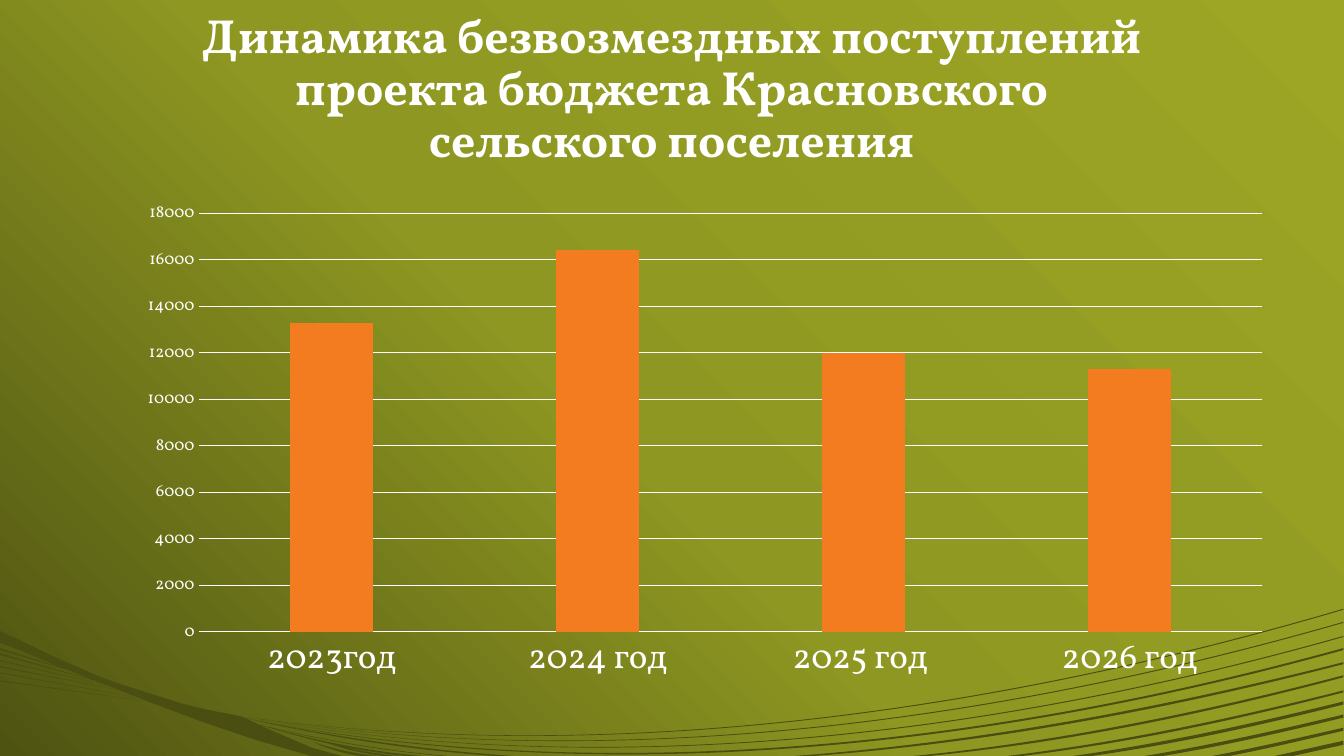
from copy import deepcopy
from dataclasses import dataclass

from lxml import etree
from pptx import Presentation
from pptx.chart.data import CategoryChartData
from pptx.dml.color import RGBColor as RGB
from pptx.enum.chart import XL_CHART_TYPE as ChartType, XL_TICK_MARK as Tick
from pptx.enum.text import MSO_ANCHOR as Anchor, PP_ALIGN as Align
from pptx.oxml import parse_xml
from pptx.oxml.ns import nsdecls, qn
from pptx.util import Cm, Pt


@dataclass(frozen=True)
class Theme:
    """Colours, font and type sizes of the slide."""
    font: str = "Vollkorn"
    white: RGB = RGB(0xFF, 0xFF, 0xFF)
    bar: RGB = RGB(0xF3, 0x7B, 0x20)
    wave: RGB = RGB(0x4A, 0x4E, 0x11)
    gradient: tuple = ((0, "9DA625"), (55, "8E9721"), (100, "4E5312"))
    title: float = 34.2
    category: float = 25
    value: float = 12
    base: float = 10


@dataclass(frozen=True)
class Box:
    """A region of the slide in centimetres."""
    x: float
    y: float
    w: float
    h: float

    def lengths(self):
        """Return left, top, width and height as lengths."""
        return Cm(self.x), Cm(self.y), Cm(self.w), Cm(self.h)


THEME = Theme()
SLIDE = Box(0, 0, 33.87, 19.05)
WAVE = Box(0, 15.34, 33.86, 3.71)
TITLE = Box(4.22, 1.12, 25.4, 3.23)
CHART = Box(1.54, 5.08, 30.4, 12.85)
INCH = 2.54
RIGHT, CREST, FLOOR = 13.33, 6.04, 7.5

LONG_STRANDS = (
    ((2.4, 7.11), (6, 7.6), (9.8, 7.08), 6.04, 0.01),
    ((2.76, 7.16), (6.31, 7.65), (9.99, 7.13), 6.17, 0.01),
    ((2.58, 7.14), (6.18, 7.75), (9.93, 7.27), 6.31, 0.01),
    ((2.45, 7.13), (6.08, 7.83), (9.89, 7.38), 6.43, 0.02),
)
CORNER_STRANDS = (
    (6.57, 6.59, 7.89, 8.08), (6.7, 6.72, 9.07, 9.23),
    (6.85, 6.87, 10, 10.15), (6.96, 6.99, 10.65, 10.84),
    (7.09, 7.12, 11.36, 11.54), (7.22, 7.25, 12.03, 12.2),
    (7.35, 7.39, 12.65, 12.83),
)
FAN_STRANDS = (
    (2.36, 7.11, 4.9, 5.09), (2.19, 7.09, 4.38, 4.44),
    (2.61, 7.2, 4.02, 4.18), (3.21, 7.36, 3.8, 3.96),
    (3.1, 7.36, 3.57, 3.74),
)
LEFT_STRANDS = (
    (6.43, 6.45, 0.88, 6.71), (6.48, 6.5, 1, 6.77),
    (6.55, 6.56, 1.06, 6.8), (6.61, 6.62, 1.2, 6.85),
    (6.67, 6.68, 1.35, 6.92), (6.75, 6.76, 1.47, 6.96),
)
RIBBON = (
    (0, 6.26), (0.57, 6.53), (0.98, 6.71), (1.17, 6.78), (1.8, 6.98),
    (2.05, 7.04), (2.4, 7.11), (2.7, 7.25), (3.1, 7.42), (3.39, 7.5),
    (3.08, 7.5), (2.53, 7.34), (2, 7.16), (1.47, 6.96), (1.06, 6.8),
    (0.55, 6.6), (0.12, 6.42), (0, 6.38),
)


def bend(start, x, near, far):
    """Return a curve to the floor, its controls given as shares of the drop."""
    (x0, y0), drop = start, FLOOR - start[1]
    return [start, (x0 + (x - x0) / 3, y0 + drop * near),
            (x0 + (x - x0) * 2 / 3, y0 + drop * far), (x, FLOOR)]


def curved_strands():
    """Return each curved strand as two cubic edges, out and back."""
    strands = []
    for root, c1, c2, y, thick in LONG_STRANDS:
        edge = [c1, c2, (RIGHT, y)]
        lower = [(px, py + thick) for px, py in edge]
        strands.append([root, *edge, *lower[::-1], root])
    for y0, y1, x0, x1 in CORNER_STRANDS:
        near = 0.29 + 0.22 * (FLOOR - y0)
        strands.append(bend((RIGHT, y0), x0, near, near + 0.36)
                       + bend((RIGHT, y1), x1, near, near + 0.36)[::-1])
    for x, y, x0, x1 in FAN_STRANDS:
        strands.append(bend((x, y), x0, 0.5, 0.85)
                       + bend((x, y), x1, 0.5, 0.85)[::-1])
    return strands


def round_off(lines):
    """Turn three straight segments into one cubic curve."""
    cubic = etree.Element(qn("a:cubicBezTo"))
    lines[0].addprevious(cubic)
    for line in lines:
        cubic.append(line[0])
        line.getparent().remove(line)


def add_background(s):
    """Fill the slide background with the diagonal gradient."""
    fill = s.background.fill
    fill.gradient()
    fill.gradient_angle = 225
    stops = s.element.xpath(".//a:gsLst")[0]
    pattern = deepcopy(stops[0])
    for stop in list(stops):
        stops.remove(stop)
    for percent, colour in THEME.gradient:
        stop = deepcopy(pattern)
        stop.set("pos", str(percent * 1000))
        stop.remove(stop[0])
        etree.SubElement(stop, qn("a:srgbClr")).set("val", colour)
        stops.append(stop)


def add_wave(s, box):
    """Draw the wave of thin strands in the box."""
    strands = curved_strands()
    straight = [[(0, y0), (x, y), (0, y1)] for y0, y1, x, y in LEFT_STRANDS]
    outlines = [[(Cm(x * INCH), Cm((y - CREST) * INCH)) for x, y in outline]
                for outline in (*strands, RIBBON, *straight)]
    builder = s.shapes.build_freeform(*outlines[0][0])
    builder.add_line_segments(outlines[0][1:], close=True)
    for outline in outlines[1:]:
        builder.move_to(*outline[0])
        builder.add_line_segments(outline[1:], close=True)
    sp = builder.convert_to_shape(Cm(box.x), Cm(box.y))
    outline = sp.element.xpath(".//a:path")[0]
    for start in outline.findall(qn("a:moveTo"))[:len(strands)]:
        lines = list(start.itersiblings())[:7]
        round_off(lines[:3])
        round_off(lines[4:])
    sp.left, sp.top, sp.width, sp.height = box.lengths()
    outline.set("w", str(sp.width))
    outline.set("h", str(sp.height))
    sp.shadow.inherit = False
    sp.fill.solid()
    sp.fill.fore_color.rgb = THEME.wave
    sp.line.fill.background()


def style_font(font, size, bold=False):
    """Set the theme face and white colour on a font."""
    font.name, font.size, font.bold = THEME.font, Pt(size), bold
    font.color.rgb = THEME.white


def add_title(s, box):
    """Place the centred heading at the bottom of the box."""
    tf = s.shapes.add_textbox(*box.lengths()).text_frame
    tf.word_wrap = True
    tf.vertical_anchor = Anchor.BOTTOM
    p = tf.paragraphs[0]
    p.text = ("Динамика безвозмездных поступлений проекта бюджета "
              "Красновского сельского поселения")
    p.alignment = Align.CENTER
    p.line_spacing = 0.9
    style_font(p.font, THEME.title, True)


def white_line(line):
    """Make a thin white line."""
    line.color.rgb = THEME.white
    line.width = Pt(0.75)


def add_receipts_chart(s, box):
    """Place the column chart of yearly receipts in the box."""
    data = CategoryChartData()
    data.categories = ["2023год", "2024 год", "2025 год ", "2026 год"]
    data.add_series("Series 1", (13300, 16400, 12000, 11300))
    chart = s.shapes.add_chart(ChartType.COLUMN_CLUSTERED, *box.lengths(),
                               data).chart
    chart.has_legend = chart.has_title = False
    style_font(chart.font, THEME.base)
    plot = chart.plots[0]
    plot.gap_width, plot.overlap = 219, -27
    plot.vary_by_categories = False
    fill = plot.series[0].format.fill
    fill.solid()
    fill.fore_color.rgb = THEME.bar
    years, amounts = chart.category_axis, chart.value_axis
    for axis, size in ((years, THEME.category), (amounts, THEME.value)):
        axis.major_tick_mark = axis.minor_tick_mark = Tick.NONE
        style_font(axis.tick_labels.font, size)
    white_line(years.format.line)
    amounts.format.line.fill.background()
    white_line(amounts.major_gridlines.format.line)
    area = chart.element.xpath(".//c:plotArea")[0]
    for old in area.findall(qn("c:layout")):
        area.remove(old)
    place = "".join(f'<c:{tag} val="{val}"/>' for tag, val in (
        ("layoutTarget", "inner"), ("xMode", "edge"), ("yMode", "edge"),
        ("x", 0.114), ("y", 0.023), ("w", 0.882), ("h", 0.821)))
    area.insert(0, parse_xml(f'<c:layout {nsdecls("c")}><c:manualLayout>'
                             f'{place}</c:manualLayout></c:layout>'))


def main():
    """Build and save the slide."""
    prs = Presentation()
    prs.slide_width, prs.slide_height = Cm(SLIDE.w), Cm(SLIDE.h)
    s = prs.slides.add_slide(prs.slide_layouts[6])
    add_background(s)
    add_wave(s, WAVE)
    add_title(s, TITLE)
    add_receipts_chart(s, CHART)
    prs.save("out.pptx")


if __name__ == "__main__":
    main()
